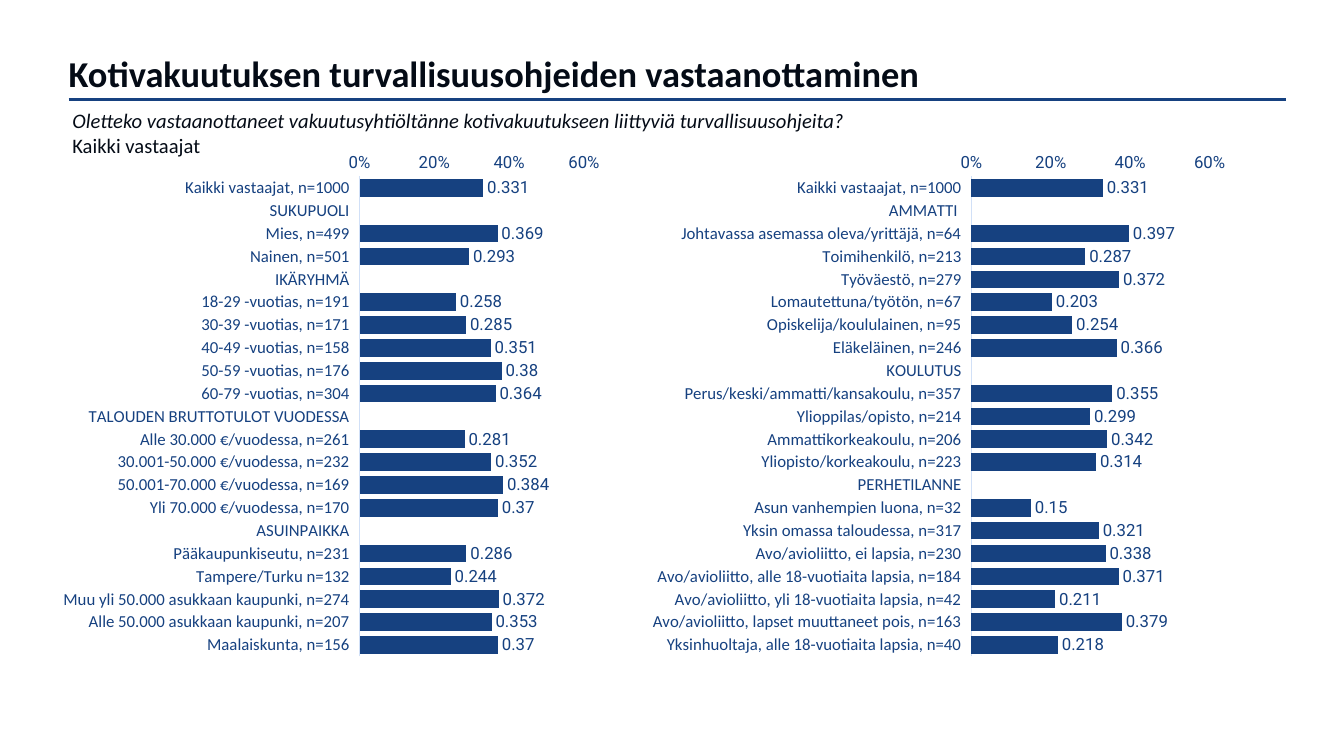
from lxml import etree
from pptx import Presentation
from pptx.chart.data import CategoryChartData
from pptx.dml.color import RGBColor
from pptx.enum.chart import (XL_AXIS_CROSSES, XL_CHART_TYPE, XL_LABEL_POSITION,
                             XL_TICK_LABEL_POSITION, XL_TICK_MARK)
from pptx.enum.shapes import MSO_CONNECTOR
from pptx.enum.text import MSO_ANCHOR, PP_ALIGN
from pptx.oxml.ns import qn
from pptx.util import Pt

BAR_CLUSTERED = XL_CHART_TYPE.BAR_CLUSTERED
OUTSIDE_END = XL_LABEL_POSITION.OUTSIDE_END
LABELS_LOW = XL_TICK_LABEL_POSITION.LOW
LABELS_NEXT_TO_AXIS = XL_TICK_LABEL_POSITION.NEXT_TO_AXIS
NO_TICK = XL_TICK_MARK.NONE
CROSS_AT_MAXIMUM = XL_AXIS_CROSSES.MAXIMUM
STRAIGHT = MSO_CONNECTOR.STRAIGHT
LEFT = PP_ALIGN.LEFT
TOP = MSO_ANCHOR.TOP

TITLE_ONLY = 5
BLUE, INK, PALE_BLUE = "164180", "040B16", "D1E0F7"
TEXT_FONT, NUMBER_FONT = "Calibri", "Roboto"
PLOT_AREA = {"x": 0.487, "y": 0.06, "w": 0.348, "h": 0.861}

# Category and share; None marks a group heading
BACKGROUND_GROUPS = [
    ("Kaikki vastaajat, n=1000", 0.331),
    ("SUKUPUOLI", None),
    ("Mies, n=499", 0.369),
    ("Nainen, n=501", 0.293),
    ("IKÄRYHMÄ", None),
    ("18-29 -vuotias, n=191", 0.258),
    ("30-39 -vuotias, n=171", 0.285),
    ("40-49 -vuotias, n=158", 0.351),
    ("50-59 -vuotias, n=176", 0.38),
    ("60-79 -vuotias, n=304", 0.364),
    ("TALOUDEN BRUTTOTULOT VUODESSA", None),
    ("Alle 30.000 €/vuodessa, n=261", 0.281),
    ("30.001-50.000 €/vuodessa, n=232", 0.352),
    ("50.001-70.000 €/vuodessa, n=169", 0.384),
    ("Yli 70.000 €/vuodessa, n=170", 0.37),
    ("ASUINPAIKKA", None),
    ("Pääkaupunkiseutu, n=231", 0.286),
    ("Tampere/Turku n=132", 0.244),
    ("Muu yli 50.000 asukkaan kaupunki, n=274", 0.372),
    ("Alle 50.000 asukkaan kaupunki, n=207", 0.353),
    ("Maalaiskunta, n=156", 0.37),
]
LIFE_SITUATION_GROUPS = [
    ("Kaikki vastaajat, n=1000", 0.331),
    ("AMMATTI ", None),
    ("Johtavassa asemassa oleva/yrittäjä, n=64", 0.397),
    ("Toimihenkilö, n=213", 0.287),
    ("Työväestö, n=279", 0.372),
    ("Lomautettuna/työtön, n=67", 0.203),
    ("Opiskelija/koululainen, n=95", 0.254),
    ("Eläkeläinen, n=246", 0.366),
    ("KOULUTUS", None),
    ("Perus/keski/ammatti/kansakoulu, n=357", 0.355),
    ("Ylioppilas/opisto, n=214", 0.299),
    ("Ammattikorkeakoulu, n=206", 0.342),
    ("Yliopisto/korkeakoulu, n=223", 0.314),
    ("PERHETILANNE", None),
    ("Asun vanhempien luona, n=32", 0.15),
    ("Yksin omassa taloudessa, n=317", 0.321),
    ("Avo/avioliitto, ei lapsia, n=230", 0.338),
    ("Avo/avioliitto, alle 18-vuotiaita lapsia, n=184", 0.371),
    ("Avo/avioliitto, yli 18-vuotiaita lapsia, n=42", 0.211),
    ("Avo/avioliitto, lapset muuttaneet pois, n=163", 0.379),
    ("Yksinhuoltaja, alle 18-vuotiaita lapsia, n=40", 0.218),
]


def color(hex_string):
    return RGBColor.from_string(hex_string)


def format_font(font, name, size, hex_string, bold=False, italic=False):
    font.name = name
    font.size = Pt(size)
    font.color.rgb = color(hex_string)
    font.bold = bold
    font.italic = italic


def place(shape, left, top, width, height):
    shape.left, shape.top = Pt(left), Pt(top)
    shape.width, shape.height = Pt(width), Pt(height)


def add_title(slide, text):
    title = slide.shapes.title
    place(title, 41.8, 33.1, 892, 38.9)
    title.text_frame.text = text
    title.text_frame.vertical_anchor = TOP
    paragraph = title.text_frame.paragraphs[0]
    paragraph.alignment = LEFT
    format_font(paragraph.runs[0].font, TEXT_FONT, 26, INK, bold=True)


def add_question(slide, question, respondents):
    box = slide.shapes.add_textbox(Pt(44.6), Pt(73.4), Pt(873.4), Pt(42.5))
    frame = box.text_frame
    frame.word_wrap = True
    frame.text = question
    frame.add_paragraph().text = respondents
    for paragraph, italic in zip(frame.paragraphs, (True, False)):
        format_font(paragraph.runs[0].font, TEXT_FONT, 14.7, INK, italic=italic)


def add_rule(slide, left, right, top):
    rule = slide.shapes.add_connector(STRAIGHT, Pt(left), Pt(top), Pt(right), Pt(top))
    rule.line.color.rgb = color(BLUE)
    rule.line.width = Pt(2.25)
    etree.SubElement(rule._element.spPr, qn("a:effectLst"))


def set_plot_layout(chart):
    plot_area = chart._chartSpace.chart.plotArea
    for old_layout in plot_area.findall(qn("c:layout")):
        plot_area.remove(old_layout)
    layout = etree.Element(qn("c:layout"))
    manual = etree.SubElement(layout, qn("c:manualLayout"))
    settings = {"layoutTarget": "inner", "xMode": "edge", "yMode": "edge", **PLOT_AREA}
    for tag, value in settings.items():
        etree.SubElement(manual, qn(f"c:{tag}")).set("val", str(value))
    plot_area.insert(0, layout)


def format_axes(chart):
    categories, values = chart.category_axis, chart.value_axis
    for axis, font_name in ((categories, TEXT_FONT), (values, NUMBER_FONT)):
        axis.has_major_gridlines = False
        axis.major_tick_mark = NO_TICK
        axis.minor_tick_mark = NO_TICK
        format_font(axis.tick_labels.font, font_name, 12, BLUE)
    categories.reverse_order = True
    categories.crosses = CROSS_AT_MAXIMUM
    categories.tick_label_position = LABELS_LOW
    categories.format.line.color.rgb = color(PALE_BLUE)
    categories.format.line.width = Pt(0.75)
    values.minimum_scale, values.maximum_scale = 0, 0.6
    values.major_unit = 0.2
    values.tick_label_position = LABELS_NEXT_TO_AXIS
    values.tick_labels.number_format = "0%"
    values.tick_labels.number_format_is_linked = False
    values.format.line.fill.background()


def add_share_chart(slide, left, width, rows):
    data = CategoryChartData()
    data.categories = [label for label, _ in rows]
    data.add_series("Series 1", [share for _, share in rows])
    frame = slide.shapes.add_chart(BAR_CLUSTERED, Pt(left), Pt(102.2),
                                   Pt(width), Pt(398.2), data)
    chart = frame.chart
    chart.has_title = False
    chart.has_legend = False
    format_font(chart.font, NUMBER_FONT, 12, BLUE)
    set_plot_layout(chart)
    format_axes(chart)

    # Bars and their values
    plot = chart.plots[0]
    plot.gap_width = 30
    plot.vary_by_categories = False
    fill = plot.series[0].format.fill
    fill.solid()
    fill.fore_color.rgb = color(BLUE)
    plot.has_data_labels = True
    labels = plot.data_labels
    labels.show_value = True
    labels.position = OUTSIDE_END
    format_font(labels.font, NUMBER_FONT, 12, BLUE)


def main():
    presentation = Presentation()
    presentation.slide_width, presentation.slide_height = Pt(960), Pt(540)
    slide = presentation.slides.add_slide(presentation.slide_layouts[TITLE_ONLY])

    # Heading
    add_title(slide, "Kotivakuutuksen turvallisuusohjeiden vastaanottaminen")
    add_rule(slide, 49, 918.7, 71.3)
    add_question(slide, "Oletteko vastaanottaneet vakuutusyhtiöltänne kotivakuutukseen "
                 "liittyviä turvallisuusohjeita?", "Kaikki vastaajat")

    # Shares by respondent group
    add_share_chart(slide, 32.4, 460.8, BACKGROUND_GROUPS)
    add_share_chart(slide, 455.8, 488.9, LIFE_SITUATION_GROUPS)

    presentation.save("out.pptx")


if __name__ == "__main__":
    main()
